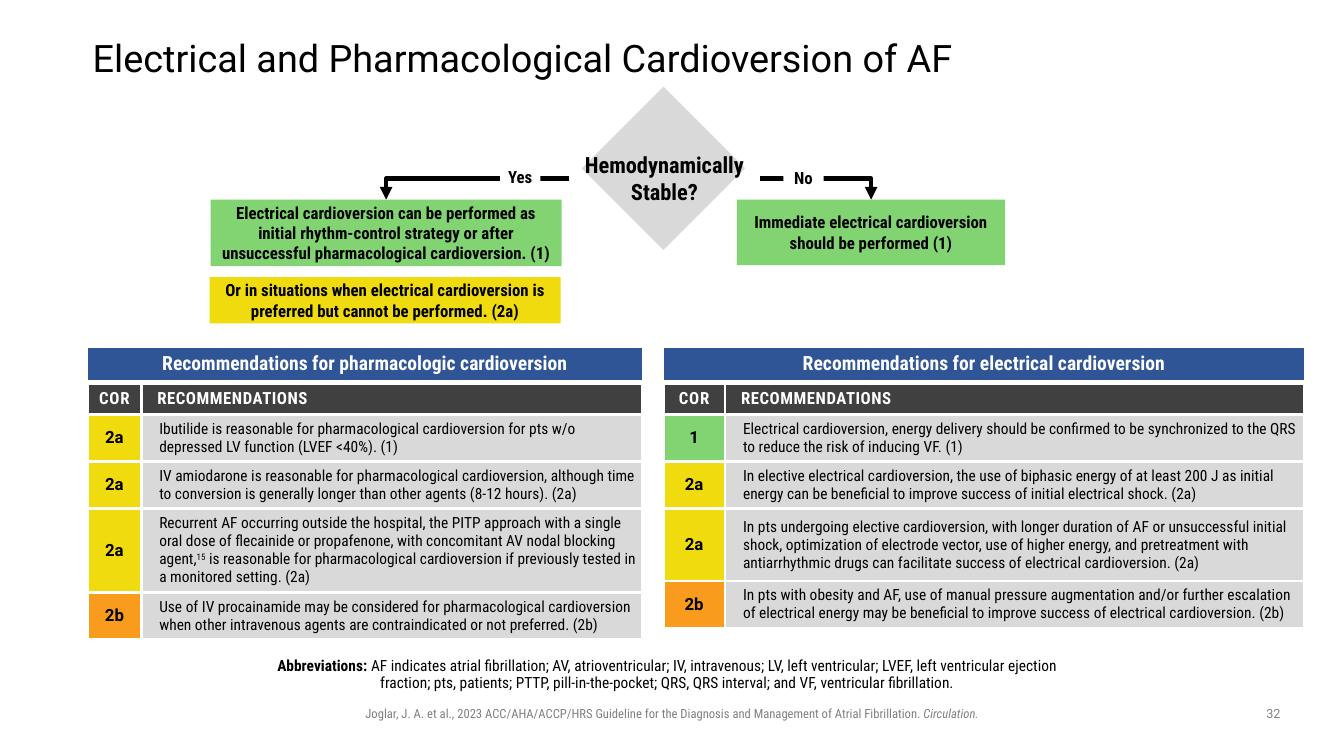
from lxml import etree
from pptx import Presentation
from pptx.dml.color import RGBColor
from pptx.enum.shapes import MSO_CONNECTOR, MSO_SHAPE
from pptx.enum.text import MSO_ANCHOR, PP_ALIGN
from pptx.oxml.ns import qn
from pptx.util import Inches, Pt

RECTANGLE, DIAMOND = MSO_SHAPE.RECTANGLE, MSO_SHAPE.DIAMOND
ELBOW = MSO_CONNECTOR.ELBOW
LEFT, CENTER = PP_ALIGN.LEFT, PP_ALIGN.CENTER
TOP, MIDDLE = MSO_ANCHOR.TOP, MSO_ANCHOR.MIDDLE
CONDENSED, ROBOTO = "Roboto Condensed", "Roboto"
COLORS = {
    "black": "000000", "white": "FFFFFF", "muted": "808080", "light": "D9D9D9",
    "dark": "404040", "blue": "2F5597", "green": "82D472", "yellow": "F0DB0E",
    "orange": "F99B1D",
}
RGB = {name: RGBColor.from_string(code) for name, code in COLORS.items()}
CLASS_FILLS = {"1": "green", "2a": "yellow", "2b": "orange"}

prs = Presentation()
prs.slide_width, prs.slide_height = Inches(13.33), Inches(7.5)
slide = prs.slides.add_slide(prs.slide_layouts[6])
shapes = slide.shapes


def write(frame, parts, size, bold=False, color="black", font=CONDENSED, align=CENTER):
    """Fill a text frame with one paragraph, one run per part; return its runs."""
    frame.word_wrap = True
    paragraph = frame.paragraphs[0]
    paragraph.text = parts[0]
    for part in parts[1:]:
        paragraph.add_run().text = part
    paragraph.alignment = align
    for run in paragraph.runs:
        run.font.size, run.font.bold, run.font.name = Pt(size), bold, font
        run.font.color.rgb = RGB[color]
    return paragraph.runs


def add_box(at, fill=None, anchor=MIDDLE, margins=(0.1, 0.05), kind=RECTANGLE):
    """Add a filled shape, or a plain text box when there is no fill."""
    place = [Inches(length) for length in at]
    if fill:
        box = shapes.add_shape(kind, *place)
        box.shadow.inherit = False
        box.fill.solid()
        box.fill.fore_color.rgb = RGB[fill]
        box.line.fill.background()
    else:
        box = shapes.add_textbox(*place)
    frame = box.text_frame
    frame.vertical_anchor = anchor
    frame.margin_left = frame.margin_right = Inches(margins[0])
    frame.margin_top = frame.margin_bottom = Inches(margins[1])
    return box


# Title
title = add_box((0.92, 0.4, 10.2, 0.39), margins=(0, 0)).text_frame
write(title, ["Electrical and Pharmacological Cardioversion of AF"], 27, font=ROBOTO, align=LEFT)
title.paragraphs[0].line_spacing = 0.9

# Decision flow
add_box((5.77, 0.86, 1.62, 1.62), "light", kind=DIAMOND)
question = add_box((5.64, 1.45, 1.9, 0.64), anchor=TOP)
write(question.text_frame, ["Hemodynamically Stable?"], 16, bold=True)

BRANCH_Y, OUTCOME_Y = 1.77, 1.98
for start_x, end_x in [(5.64, 3.83), (7.54, 8.64)]:
    branch = shapes.add_connector(
        ELBOW, Inches(start_x), Inches(BRANCH_Y), Inches(end_x), Inches(OUTCOME_Y))
    branch.line.color.rgb = RGB["black"]
    branch.line.width = Pt(3)
    properties = branch._element.spPr
    properties.find(qn("a:prstGeom")).set("prst", "bentConnector2")
    etree.SubElement(properties.find(qn("a:ln")), qn("a:tailEnd"), type="triangle")
    etree.SubElement(properties, qn("a:effectLst"))

for answer, at in [("No", (7.77, 1.61, 0.4, 0.3)), ("Yes", (4.96, 1.65, 0.4, 0.2))]:
    label = add_box(at, "white", margins=(0, 0))
    write(label.text_frame, [answer], 12, bold=True)

outcomes = [
    ((2.09, OUTCOME_Y, 3.48, 0.66), "green",
     "Electrical cardioversion can be performed as initial rhythm-control strategy "
     "or after unsuccessful pharmacological cardioversion. (1)"),
    ((2.08, 2.75, 3.48, 0.46), "yellow",
     "Or in situations when electrical cardioversion is preferred but cannot be performed. (2a)"),
    ((7.31, OUTCOME_Y, 2.66, 0.65), "green",
     "Immediate electrical cardioversion should be performed (1)"),
]
for at, fill, outcome in outcomes:
    write(add_box(at, fill).text_frame, [outcome], 12, bold=True)

# Recommendation tables
ROW_HEIGHTS = [0.26, 0.4, 0.4, 0.72, 0.4]
panels = [
    (0.87, [0.53, 4.97], "Recommendations for pharmacologic cardioversion", [
        ("2a", ["Ibutilide is reasonable for pharmacological cardioversion for pts w/o "
                "depressed LV function (LVEF <40%). (1)"]),
        ("2a", ["IV amiodarone is reasonable for pharmacological cardioversion, although "
                "time to conversion is generally longer than other agents (8-12 hours). (2a)"]),
        ("2a", ["Recurrent AF occurring outside the hospital, the PITP approach with a single "
                "oral dose of flecainide or propafenone, with concomitant AV nodal blocking agent,",
                "15",
                " is reasonable for pharmacological cardioversion if previously tested "
                "in a monitored setting. (2a)"]),
        ("2b", ["Use of IV procainamide may be considered for pharmacological cardioversion "
                "when other intravenous agents are contraindicated or not preferred. (2b)"]),
    ]),
    (6.58, [0.61, 5.75], "Recommendations for electrical cardioversion", [
        ("1", ["Electrical cardioversion, energy delivery should be confirmed to be synchronized "
               "to the QRS to reduce the risk of inducing VF. (1)"]),
        ("2a", ["In elective electrical cardioversion, the use of biphasic energy of at least 200 J "
                "as initial energy can be beneficial to improve success of initial electrical "
                "shock. (2a)"]),
        ("2a", ["In pts undergoing elective cardioversion, with longer duration of AF or "
                "unsuccessful initial shock, optimization of electrode vector, use of higher "
                "energy, and pretreatment with antiarrhythmic drugs can facilitate success of "
                "electrical cardioversion. (2a)"]),
        ("2b", ["In pts with obesity and AF, use of manual pressure augmentation and/or further "
                "escalation of electrical energy may be beneficial to improve success of "
                "electrical cardioversion. (2b)"]),
    ]),
]
for left, widths, heading, recommendations in panels:
    banner = add_box((left - 0.01, 3.44, sum(widths) + 0.02, 0.34), "blue", margins=(0.1, 0))
    banner.line.color.rgb = RGB["white"]
    banner.line.width = Pt(2)
    write(banner.text_frame, [heading], 14, bold=True, color="white")
    banner.text_frame.paragraphs[0].line_spacing = 0.9

    table = shapes.add_table(
        len(ROW_HEIGHTS), len(widths), Inches(left), Inches(3.81),
        Inches(sum(widths)), Inches(sum(ROW_HEIGHTS))).table
    for column, width in zip(table.columns, widths):
        column.width = Inches(width)
    for row, height in zip(table.rows, ROW_HEIGHTS):
        row.height = Inches(height)

    for cell in table.iter_cells():
        cell.vertical_anchor = MIDDLE
        for side in ("a:lnL", "a:lnR", "a:lnT", "a:lnB"):
            border = etree.SubElement(cell._tc.get_or_add_tcPr(), qn(side), w=str(Pt(2.25)))
            paint = etree.SubElement(border, qn("a:solidFill"))
            etree.SubElement(paint, qn("a:srgbClr"), val=COLORS["white"])
        cell.fill.solid()

    headers = [("COR", CENTER, "50", 0), ("RECOMMENDATIONS", LEFT, "40", 0.06)]
    for column, (header, align, tracking, indent) in enumerate(headers):
        cell = table.cell(0, column)
        cell.fill.fore_color.rgb = RGB["dark"]
        run = write(cell.text_frame, [header], 12, bold=True, color="white", align=align)[0]
        run._r.get_or_add_rPr().set("spc", tracking)
        cell.text_frame.paragraphs[0]._p.get_or_add_pPr().set("marL", str(Inches(indent)))

    for row, (strength, advice) in enumerate(recommendations, start=1):
        strength_cell, advice_cell = table.cell(row, 0), table.cell(row, 1)
        for cell in (strength_cell, advice_cell):
            cell.margin_left = cell.margin_right = Inches(0.05)
        strength_cell.fill.fore_color.rgb = RGB[CLASS_FILLS[strength]]
        write(strength_cell.text_frame, [strength], 12, bold=True, font=ROBOTO)
        advice_cell.fill.fore_color.rgb = RGB["light"]
        runs = write(advice_cell.text_frame, advice, 11, align=LEFT)
        advice_cell.text_frame.paragraphs[0]._p.get_or_add_pPr().set("marL", str(Inches(0.13)))
        for reference in runs[1:2]:
            reference._r.get_or_add_rPr().set("baseline", "30000")

# Abbreviations, citation and slide number
abbreviations = add_box((2.56, 6.48, 8.22, 0.37), anchor=TOP).text_frame
abbreviations.margin_left = 0
lead, _ = write(abbreviations, [
    "Abbreviations: ",
    "AF indicates atrial fibrillation; AV, atrioventricular; IV, intravenous; LV, left ventricular; "
    "LVEF, left ventricular ejection fraction; pts, patients; PTTP, pill-in-the-pocket; "
    "QRS, QRS interval; and VF, ventricular fibrillation."], 11)
lead.font.bold = True
abbreviations.paragraphs[0].line_spacing = 0.9

citation = add_box((2.94, 6.95, 7.45, 0.25), anchor=TOP)
_, journal = write(citation.text_frame, [
    "Joglar, J. A. et al., 2023 ACC/AHA/ACCP/HRS Guideline for the Diagnosis and Management "
    "of Atrial Fibrillation. ", "Circulation."], 9, color="muted")
journal.font.italic = True

slide_number = add_box((12.42, 6.95, 0.42, 0.26), anchor=TOP)
write(slide_number.text_frame, ["32"], 9, color="muted", font=ROBOTO)

prs.save("out.pptx")
